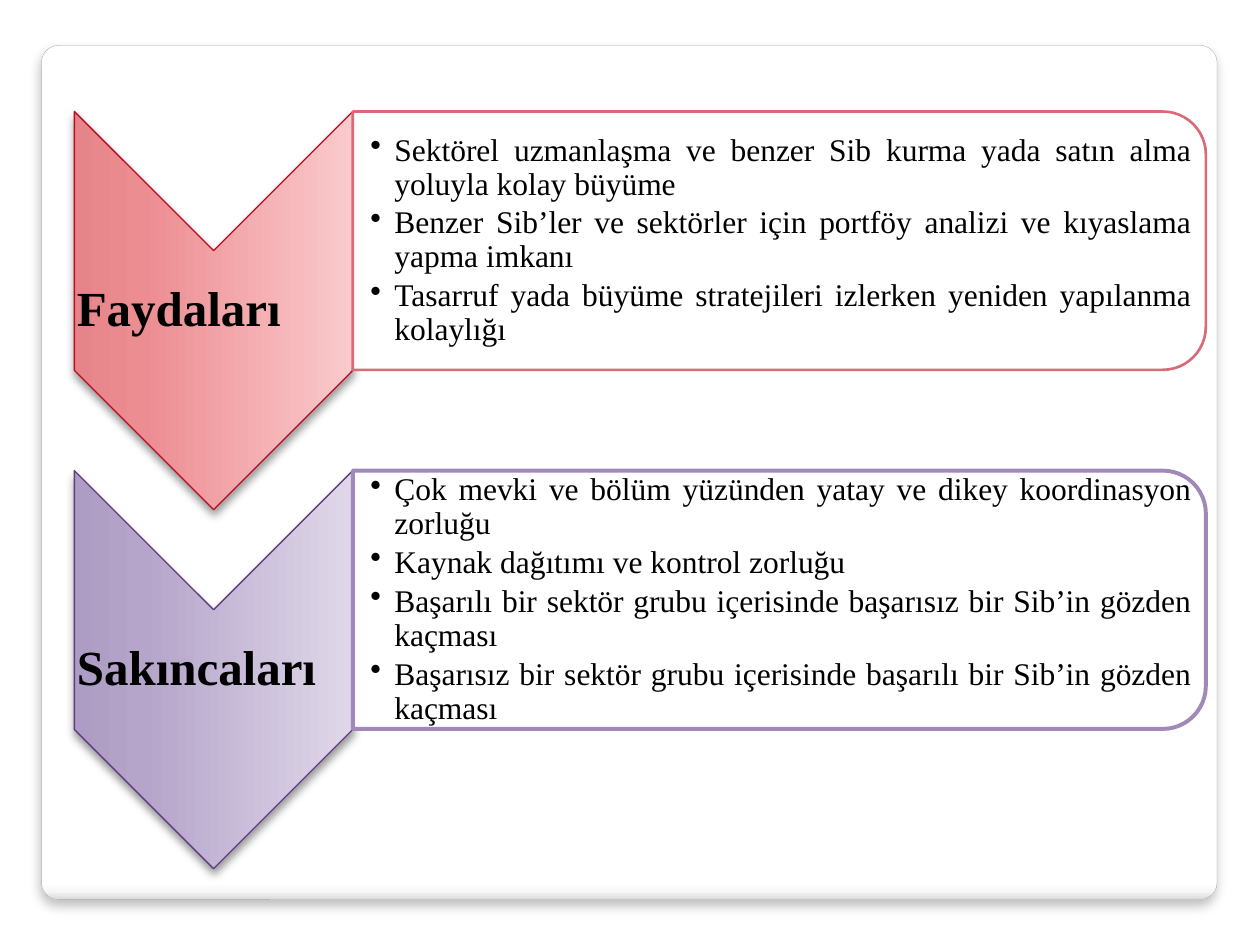
import dataclasses

import pptx
import pptx.dml.color
import pptx.enum.shapes
import pptx.enum.text
import pptx.oxml.ns
import pptx.util
from lxml import etree

SHAPE = pptx.enum.shapes.MSO_SHAPE
qn = pptx.oxml.ns.qn


@dataclasses.dataclass(frozen=True)
class Theme:
    font: str = "Times New Roman"
    ink: str = "000000"
    paper: str = "FFFFFF"
    edge: str = "A4A4A4"
    card: tuple = ((0, "FFFFFF"), (98, "FFFFFF"), (99, "F7F7F7"), (100, "DADADA"))
    head: int = 28
    body: int = 18


@dataclasses.dataclass(frozen=True)
class Block:
    title: str
    points: tuple
    fade: tuple
    edge: str
    frame: str
    width: float


def rgb(code):
    return pptx.dml.color.RGBColor.from_string(code)


def child(node, tag, **attrs):
    return etree.SubElement(node, qn(tag), {k: str(v) for k, v in attrs.items()})


class Deck:
    """Draws on one slide, with a grid of 100 columns and 75 rows."""

    def __init__(self, theme):
        self.theme = theme
        self.prs = pptx.Presentation()
        self.prs.slide_width = pptx.util.Inches(10)
        self.prs.slide_height = pptx.util.Inches(7.5)
        self.cell = self.prs.slide_width / 100
        self.slide = self.prs.slides.add_slide(self.prs.slide_layouts[6])
        fill = self.slide.background.fill
        fill.solid()
        fill.fore_color.rgb = rgb(theme.paper)

    def span(self, *cells):
        return [round(n * self.cell) for n in cells]

    def shape(self, kind, box, edge, width, turn=False):
        """Add an outlined shape; box is what shows, also after a quarter turn."""
        x, y, w, h = box
        if turn:
            x, y, w, h = x + (w - h) / 2, y + (h - w) / 2, h, w
        item = self.slide.shapes.add_shape(kind, *self.span(x, y, w, h))
        item.rotation = 90 if turn else 0
        item.line.color.rgb = rgb(edge)
        item.line.width = pptx.util.Pt(width)
        item.shadow.inherit = False
        return item

    def fade(self, item, stops, angle):
        item.fill.gradient()
        grad = item.element.spPr.find(qn("a:gradFill"))
        grad.find(qn("a:lin")).set("ang", str(angle * 60000))
        rows = grad.find(qn("a:gsLst"))
        for old in list(rows):
            rows.remove(old)
        for place, code in stops:
            child(child(rows, "a:gs", pos=place * 1000), "a:srgbClr", val=code)

    def shade(self, item, alpha, blur, dist):
        fx = item.element.spPr.find(qn("a:effectLst"))
        drop = child(fx, "a:outerShdw", blurRad=pptx.util.Pt(blur),
                     dist=pptx.util.Pt(dist), dir=90 * 60000, rotWithShape=0)
        tint = child(drop, "a:srgbClr", val=self.theme.ink)
        child(tint, "a:alpha", val=alpha * 1000)

    def card(self, box):
        item = self.shape(SHAPE.ROUNDED_RECTANGLE, box, self.theme.edge, 0.16)
        item.adjustments[0] = 0.02
        self.fade(item, self.theme.card, 90)
        self.shade(item, 25, 6, 4)

    def arrow(self, box, stops, edge):
        item = self.shape(SHAPE.CHEVRON, box, edge, 0.75, turn=True)
        self.fade(item, stops, 270)
        self.shade(item, 40, 5.2, 3)

    def frame(self, box, edge, width):
        item = self.shape(SHAPE.ROUND_2_SAME_RECTANGLE, box, edge, width, turn=True)
        item.fill.solid()
        item.fill.fore_color.rgb = rgb(self.theme.paper)
        tint = item.element.spPr.find(qn("a:solidFill"))[0]
        child(tint, "a:alpha", val=90000)

    def text(self, box, lines, size, pad, bold=False, bullet=False):
        """Add justified lines; pad is the left inset and the other three."""
        frame = self.slide.shapes.add_textbox(*self.span(*box)).text_frame
        frame.word_wrap = True
        frame.vertical_anchor = pptx.enum.text.MSO_ANCHOR.MIDDLE
        left, rest = self.span(*pad)
        frame.margin_left = left
        frame.margin_top = frame.margin_right = frame.margin_bottom = rest
        for i, line in enumerate(lines):
            para = frame.add_paragraph() if i else frame.paragraphs[0]
            if bullet:
                self.dot(para)
            para.alignment = pptx.enum.text.PP_ALIGN.JUSTIFY
            para.line_spacing = 0.9
            para.space_after = pptx.util.Pt(size * (0.15 if bullet else 0.35))
            run = para.add_run()
            run.text = line
            run.font.name = self.theme.font
            run.font.size = pptx.util.Pt(size)
            run.font.bold = bold
            run.font.color.rgb = rgb(self.theme.ink)

    def dot(self, para):
        para.level = 1
        props = para._p.get_or_add_pPr()
        hang, = self.span(1.9)
        props.set("marL", str(hang))
        props.set("indent", str(-hang))
        child(props, "a:buChar", char="•")

    def block(self, top, data):
        left, mid = 5.9, 28
        wide = mid - left
        self.arrow((left, top, wide, 31.6), data.fade, data.edge)
        self.text((left, top + 11.05, wide, 9.5), [data.title],
                  self.theme.head, (0.2, 0.2), bold=True)
        self.frame((mid, top, 67.7, 20.5), data.frame, data.width)
        self.text((mid, top + 1, 66.7, 18.5), data.points,
                  self.theme.body, (1.4, 0.1), bullet=True)


BLOCKS = (
    Block("Faydaları", (
        "Sektörel uzmanlaşma ve benzer Sib kurma yada satın alma yoluyla kolay büyüme",
        "Benzer Sib’ler ve sektörler için portföy analizi ve kıyaslama yapma imkanı",
        "Tasarruf yada büyüme stratejileri izlerken yeniden yapılanma kolaylığı",
    ), ((0, "E68589"), (25, "EC8D92"), (100, "FBCACC")), "BC0B1F", "D96B77", 1.5),
    Block("Sakıncaları", (
        "Çok mevki ve bölüm yüzünden yatay ve dikey koordinasyon zorluğu",
        "Kaynak dağıtımı ve kontrol zorluğu",
        "Başarılı bir sektör grubu içerisinde başarısız bir Sib’in gözden kaçması",
        "Başarısız bir sektör grubu içerisinde başarılı bir Sib’in gözden kaçması",
    ), ((0, "AD9CC3"), (25, "B5A5CA"), (100, "DFD7E9")), "603C84", "A088B7", 2.25),
)


def main():
    deck = Deck(Theme())
    deck.card((3.3, 3.6, 93.3, 71.4 - 3.6))
    for i, data in enumerate(BLOCKS):
        deck.block(8.85 + i * 28.5, data)
    deck.prs.save("out.pptx")


if __name__ == "__main__":
    main()
